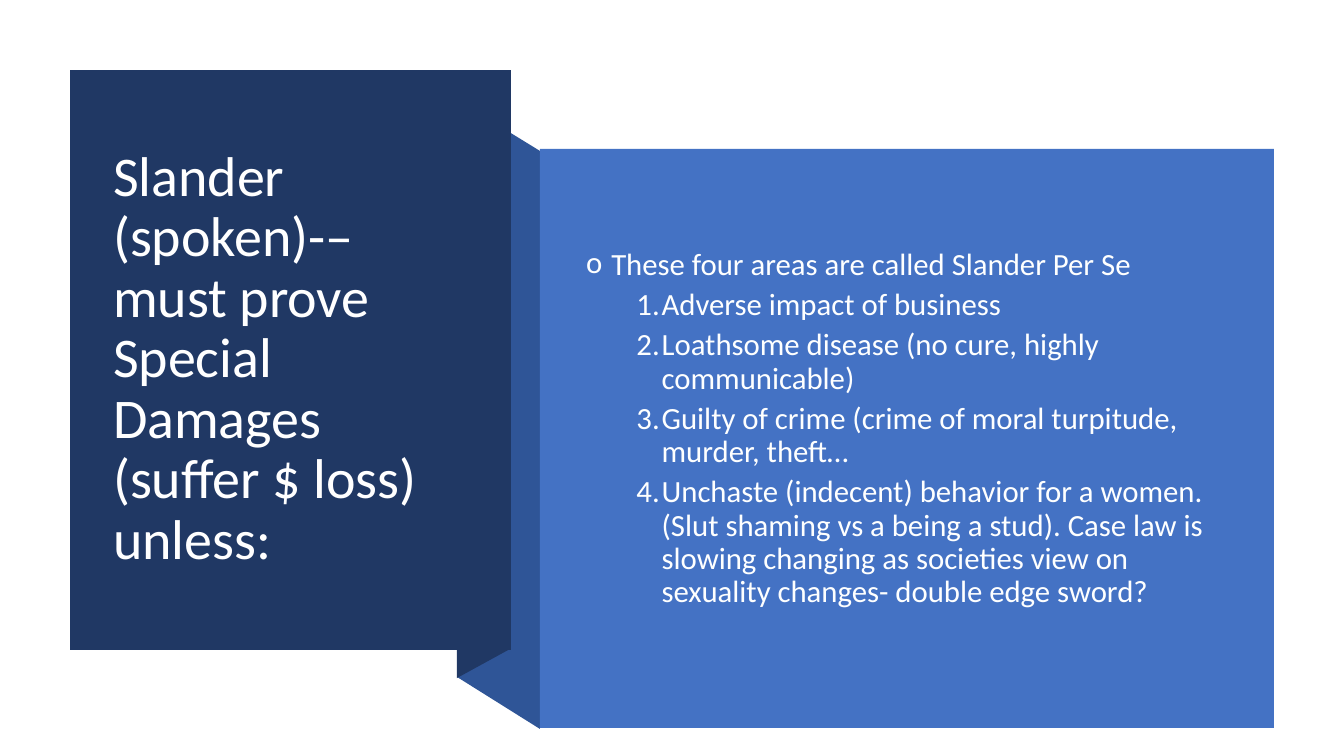
from lxml.etree import SubElement
from pptx import Presentation
from pptx.dml.color import RGBColor
from pptx.enum.shapes import MSO_SHAPE
from pptx.enum.text import MSO_ANCHOR, MSO_AUTO_SIZE, PP_ALIGN
from pptx.oxml.ns import qn
from pptx.util import Inches, Pt

PX = Inches(1) / 100.8
COLORS = {
    "navy": "203864",
    "fold": "2F5597",
    "blue": "4472C4",
    "title": "FFFFFF",
    "body": "FEFFFF",
}


def paint(sp, color):
    sp.shadow.inherit = False
    sp.fill.solid()
    sp.fill.fore_color.rgb = RGBColor.from_string(COLORS[color])
    sp.line.fill.background()


def place_text(sp, box, paragraphs, size, color):
    """Move a placeholder to the front, place it and fill in formatted paragraphs."""
    slide.shapes._spTree.append(sp._element)
    for name, value in zip(("left", "top", "width", "height"), box):
        setattr(sp, name, round(value * PX))
    tf = sp.text_frame
    tf.text = "\n".join(paragraphs)
    frame_format = {
        "word_wrap": True,
        "auto_size": MSO_AUTO_SIZE.NONE,
        "vertical_anchor": MSO_ANCHOR.MIDDLE,
    }
    for name, value in frame_format.items():
        setattr(tf, name, value)
    for p in tf.paragraphs:
        p.alignment = PP_ALIGN.LEFT
        p.line_spacing = 0.9
        font = p.runs[0].font
        font.name = "Calibri"
        font.size = Pt(size)
        font.color.rgb = RGBColor.from_string(COLORS[color])


prs = Presentation()
prs.slide_width = round(1344 * PX)
prs.slide_height = round(756 * PX)
slide = prs.slides.add_slide(prs.slide_layouts[1])

# Ribbon, back to front
ribbon = [
    ("fold", [(540, 729), (457, 677), (457, 100), (540, 151)]),
    ("navy", [(510, 649), (457, 678), (457, 99), (510, 70)]),
    ("navy", [(70, 70), (511, 70), (511, 650), (70, 650)]),
]
for color, points in ribbon:
    outline = slide.shapes.build_freeform(*points[0], scale=PX)
    outline.add_line_segments(points[1:], close=True)
    paint(outline.convert_to_shape(), color)

panel_box = [round(v * PX) for v in (540, 149, 734, 579)]
paint(slide.shapes.add_shape(MSO_SHAPE.RECTANGLE, *panel_box), "blue")

# Title and list
title = "Slander (spoken)-–must prove Special Damages (suffer $ loss) unless:"
place_text(slide.shapes.title, (103, 108, 374, 503), [title], 40, "title")

points = [
    "These four areas are called Slander Per Se",
    "Adverse impact of business",
    "Loathsome disease (no cure, highly communicable)",
    "Guilty of crime (crime of moral turpitude, murder, theft…",
    "Unchaste (indecent) behavior for a women. (Slut shaming vs a being a stud). "
    "Case law is slowing changing as societies view on sexuality changes- "
    "double edge sword?",
]
body = slide.placeholders[1]
place_text(body, (576, 190, 656, 478), points, 22, "body")

for i, p in enumerate(body.text_frame.paragraphs):
    p.level = min(i, 1)
    p.space_before = Pt(5 if p.level else 10)
    pPr = p._p.get_or_add_pPr()
    pPr.set("marL", str(Inches(0.75 if p.level else 0.25)))
    pPr.set("indent", str(-Inches(0.25)))
    SubElement(pPr, qn("a:buFont"), typeface="Calibri")
    if p.level:
        SubElement(pPr, qn("a:buAutoNum"), type="arabicPeriod")
    else:
        SubElement(pPr, qn("a:buChar"), char="o")

prs.save("out.pptx")
